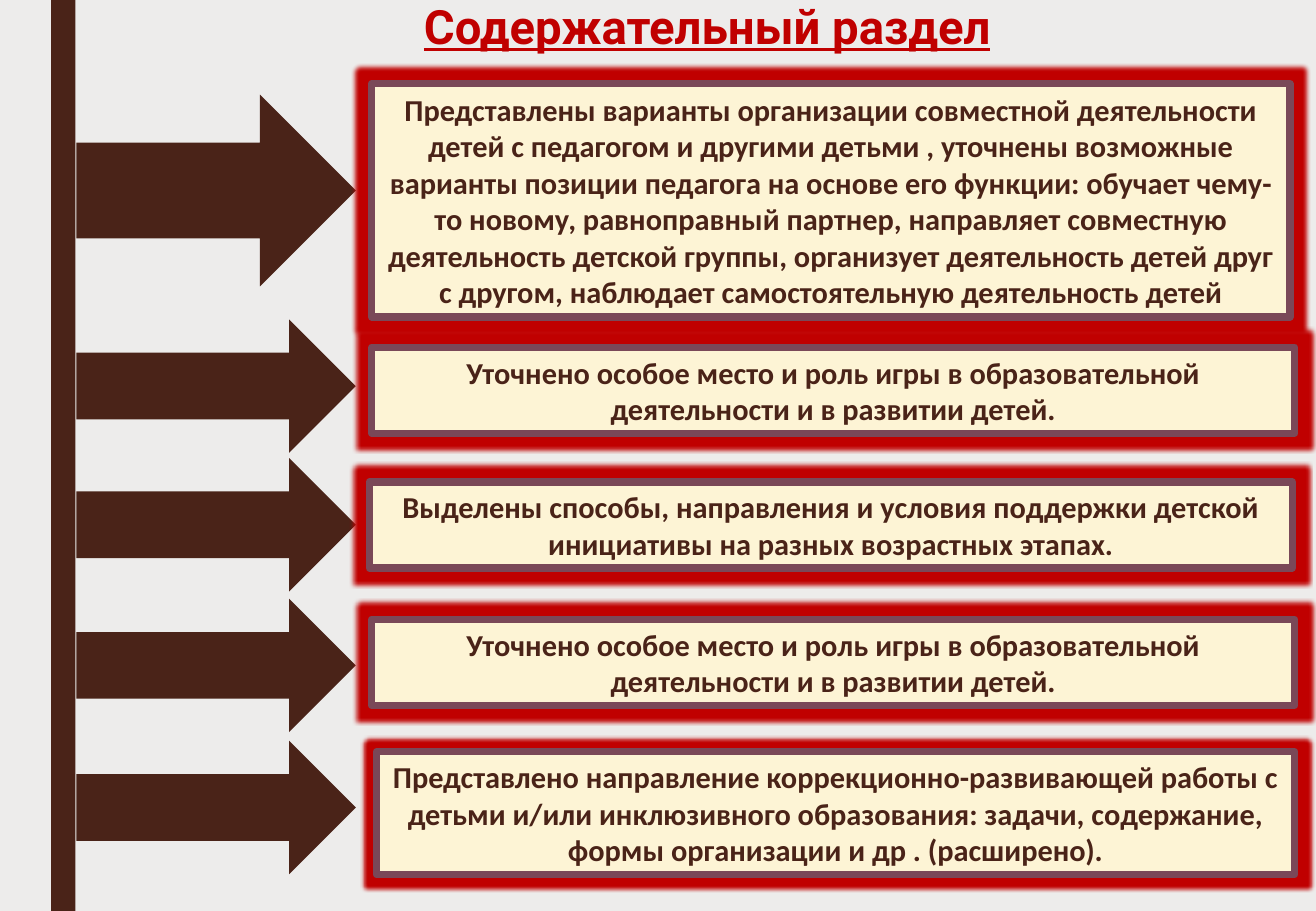
from lxml import etree
from pptx import Presentation
from pptx.dml.color import RGBColor
from pptx.enum.shapes import MSO_SHAPE
from pptx.enum.text import MSO_ANCHOR, MSO_AUTO_SIZE, PP_ALIGN
from pptx.oxml.ns import qn
from pptx.util import Cm, Pt

RECTANGLE = MSO_SHAPE.RECTANGLE
RIGHT_ARROW = MSO_SHAPE.RIGHT_ARROW
MIDDLE = MSO_ANCHOR.MIDDLE
GROW = MSO_AUTO_SIZE.SHAPE_TO_FIT_TEXT
CENTER = PP_ALIGN.CENTER

BROWN, CREAM, PLUM, RED, GREY = "4A2318", "FDF4D5", "7A4858", "C00000", "EDECEB"
GLOW_RADIUS = Pt(5)
ARROW_LEFT, ARROW_WIDTH = 1.6, 5.84

GAME = "Уточнено особое место и роль игры в образовательной деятельности и в развитии детей."
# Arrow top and height, then box left, top, width and height (cm), then text
SECTIONS = [
    (1.98, 4.01, 7.77, 1.75, 19.2, 4.88,
     "Представлены варианты организации совместной деятельности детей с педагогом "
     "и другими детьми , уточнены возможные варианты позиции педагога на основе его "
     "функции: обучает чему-то новому, равноправный партнер, направляет совместную "
     "деятельность детской группы, организует деятельность детей друг с другом, "
     "наблюдает самостоятельную деятельность детей"),
    (6.68, 2.79, 7.77, 7.26, 19.3, 1.8, GAME),
    (9.58, 2.79, 7.72, 10.08, 19.3, 1.8,
     "Выделены способы, направления и условия поддержки детской инициативы "
     "на разных возрастных этапах."),
    (12.52, 2.79, 7.77, 12.95, 19.3, 1.8, GAME),
    (15.49, 2.79, 7.87, 15.72, 19.2, 2.57,
     "Представлено направление коррекционно-развивающей работы с детьми и/или "
     "инклюзивного образования: задачи, содержание, формы организации и др . (расширено)."),
]


def paint(color_format, color):
    color_format.rgb = RGBColor.from_string(color)


def add_block(kind, left, top, width, height, color):
    block = slide.shapes.add_shape(kind, Cm(left), Cm(top), Cm(width), Cm(height))
    block.shadow.inherit = False
    block.fill.solid()
    paint(block.fill.fore_color, color)
    block.line.fill.background()
    return block


prs = Presentation()
prs.slide_width, prs.slide_height = Cm(27.51), Cm(19.05)
slide = prs.slides.add_slide(prs.slide_layouts[6])
slide.background.fill.solid()
paint(slide.background.fill.fore_color, GREY)

# Vertical bar
add_block(RECTANGLE, 1.07, 0, 0.51, 19.05, BROWN)

# Title
title = slide.shapes.add_textbox(Cm(7.9), Cm(-0.18), Cm(13.77), Cm(1.45))
texts = [(title, "Содержательный раздел", "Roboto", 28, RED)]

# Arrows and glowing boxes
for arrow_top, arrow_height, left, top, width, height, text in SECTIONS:
    add_block(RIGHT_ARROW, ARROW_LEFT, arrow_top, ARROW_WIDTH, arrow_height, BROWN)
    box = add_block(RECTANGLE, left, top, width, height, CREAM)
    paint(box.line.color, PLUM)
    box.line.width = Pt(4.25)
    effects = box.element.spPr.find(qn("a:effectLst"))
    glow = etree.SubElement(effects, qn("a:glow"), rad=str(GLOW_RADIUS))
    etree.SubElement(glow, qn("a:srgbClr"), val=RED)
    texts.append((box, text, "Calibri", 18, BROWN))

# Wording
for holder, text, font_name, size, color in texts:
    frame = holder.text_frame
    frame.word_wrap = True
    frame.auto_size = GROW
    frame.vertical_anchor = MIDDLE
    paragraph = frame.paragraphs[0]
    paragraph.alignment = CENTER
    run = paragraph.add_run()
    run.text = text
    run.font.name = font_name
    run.font.size = Pt(size)
    run.font.bold = True
    run.font.underline = True if holder is title else None
    paint(run.font.color, color)

prs.save("out.pptx")
